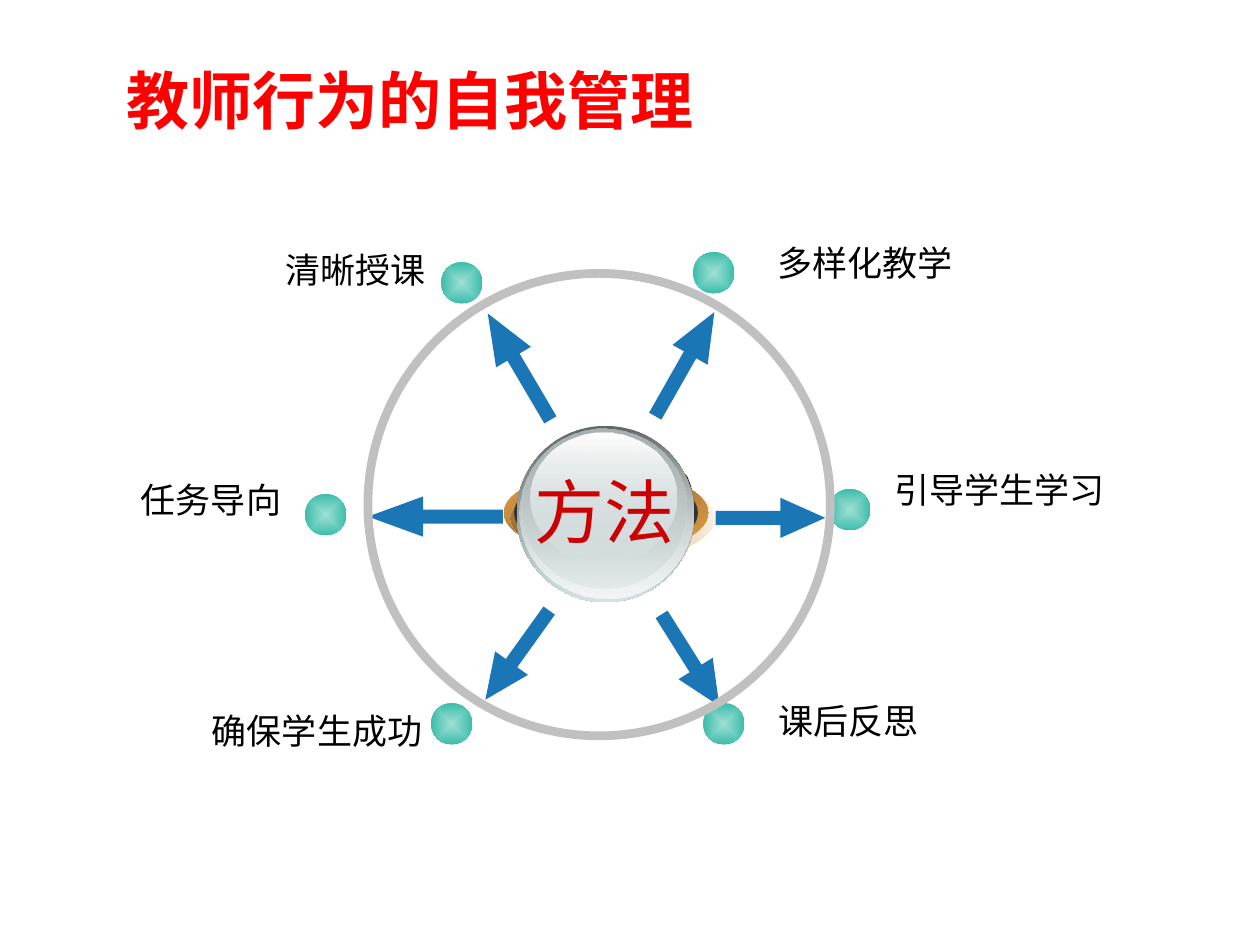
from lxml import etree
from pptx import Presentation
from pptx.dml.color import RGBColor
from pptx.enum.shapes import MSO_SHAPE
from pptx.enum.text import MSO_ANCHOR, PP_ALIGN
from pptx.oxml.ns import qn
from pptx.util import Inches, Pt

BLUE = RGBColor(0x1A, 0x76, 0xB4)
BLACK = RGBColor(0, 0, 0)
RED = RGBColor(0xFF, 0, 0)
DARK_RED = RGBColor(0xCC, 0, 0)
GRAY = RGBColor(0xC0, 0xC0, 0xC0)
CHARCOAL = RGBColor(0x33, 0x33, 0x33)
MINT = RGBColor(0xA0, 0xDF, 0xD6)
TEAL = RGBColor(0x3B, 0xBD, 0xAA)
ORANGE = RGBColor(0xEA, 0xA5, 0x4A)
BROWN = RGBColor(0x7F, 0x59, 0x28)
TAN = RGBColor(0x95, 0x69, 0x2F)
WHITE = RGBColor(0xFF, 0xFF, 0xFF)
SLATE = RGBColor(0x63, 0x68, 0x69)
SILVER = RGBColor(0xAA, 0xB2, 0xB3)
PALE = RGBColor(0xD6, 0xE1, 0xE2)
MIST = RGBColor(0xF1, 0xF5, 0xF5)

CJK_FONT = "Noto Sans CJK SC"
TITLE_FONT = "Times New Roman"
ARROW_HEIGHT = 0.32
DOT_SIZE = 0.33

ARROWS = [
    (4.96, 2.73, 0.95, 299.6),
    (5.05, 5.08, 0.86, 57.8),
    (3.63, 2.75, 0.98, 239.5),
    (3.67, 5.04, 0.87, 125.6),
    (5.68, 3.95, 0.87, 0),
    (2.92, 3.94, 1.07, 180),
]
METHODS = [
    ("多样化教学", (6.07, 1.87, 1.93, 0.44), PP_ALIGN.LEFT, (5.5, 2)),
    ("清晰授课", (2.17, 1.92, 2.04, 0.44), PP_ALIGN.LEFT, (3.5, 2.08)),
    ("引导学生学习", (7, 3.67, 2.01, 0.44), PP_ALIGN.LEFT, (6.58, 3.88)),
    ("任务导向", (0.67, 3.75, 1.66, 0.44), PP_ALIGN.RIGHT, (2.42, 3.92)),
    ("确保学生成功", (1.5, 5.58, 1.95, 0.44), PP_ALIGN.RIGHT, (3.42, 5.58)),
    ("课后反思", (6.08, 5.5, 2.01, 0.44), PP_ALIGN.LEFT, (5.58, 5.58)),
]
HUB_BAND = [
    ((5.3, 3.74, 0.2, 0.66), [(0, ORANGE, 100), (50, WHITE, 100), (100, ORANGE, 100)], 315),
    ((5.3, 3.74, 0.2, 0.66), [(0, ORANGE, 32), (100, BLACK, 90)], 315),
    ((4, 3.74, 1.62, 0.66), [(0, ORANGE, 100), (50, BROWN, 100), (100, ORANGE, 100)], 45),
    ((4.05, 3.78, 1.62, 0.66), [(0, TAN, 100), (100, ORANGE, 0)], 315),
]
HUB_CORE = (4.08, 3.74, 1.46, 0.66)
HUB_GLASS = [
    ((4.1, 3.38, 1.41, 1.4), [(0, SLATE, 100), (100, PALE, 100)], 90),
    ((4.12, 3.39, 1.38, 1.36), [(0, PALE, 0), (100, MIST, 100)], 90),
    ((4.14, 3.4, 1.31, 1.27), [(0, SILVER, 100), (100, PALE, 48)], 90),
    ((4.21, 3.43, 1.16, 1.03), [(0, WHITE, 100), (100, PALE, 38)], 90),
]


def add_figure(slide, preset, box, fill=None):
    figure = slide.shapes.add_shape(preset, *map(Inches, box))
    figure.shadow.inherit = False
    figure.line.fill.background()
    if fill is None:
        figure.fill.background()
    else:
        figure.fill.solid()
        figure.fill.fore_color.rgb = fill
    return figure


def add_gradient_ellipse(slide, box, stops, angle=None):
    ellipse = add_figure(slide, MSO_SHAPE.OVAL, box, WHITE)
    solid = ellipse._element.spPr.find(qn("a:solidFill"))
    gradient = etree.Element(qn("a:gradFill"), rotWithShape="1")
    stop_list = etree.SubElement(gradient, qn("a:gsLst"))
    for position, color, opacity in stops:
        stop = etree.SubElement(stop_list, qn("a:gs"), pos=str(position * 1000))
        tint = etree.SubElement(stop, qn("a:srgbClr"), val=str(color))
        if opacity < 100:
            etree.SubElement(tint, qn("a:alpha"), val=str(opacity * 1000))
    if angle is None:
        shading = etree.SubElement(gradient, qn("a:path"), path="shape")
        etree.SubElement(shading, qn("a:fillToRect"), l="50000", t="50000", r="50000", b="50000")
    else:
        etree.SubElement(gradient, qn("a:lin"), ang=str(angle * 60000), scaled="1")
    solid.getparent().replace(solid, gradient)


def add_label(slide, text, box, size, color, align=PP_ALIGN.LEFT, font_name=CJK_FONT,
              bold=False, wrap=True):
    frame = slide.shapes.add_textbox(*map(Inches, box)).text_frame
    frame.word_wrap = wrap
    frame.vertical_anchor = MSO_ANCHOR.TOP
    frame.text = text
    paragraph = frame.paragraphs[0]
    paragraph.alignment = align
    run = paragraph.runs[0]
    run.font.size = Pt(size)
    run.font.bold = bold
    run.font.color.rgb = color
    run.font.name = font_name
    east_asian = etree.Element(qn("a:ea"), typeface=CJK_FONT)
    run._r.rPr.find(qn("a:latin")).addnext(east_asian)


def main():
    prs = Presentation()
    prs.slide_width, prs.slide_height = Inches(10), Inches(7.5)
    slide = prs.slides.add_slide(prs.slide_layouts[6])

    for left, top, length, rotation in ARROWS:
        arrow = add_figure(slide, MSO_SHAPE.RIGHT_ARROW, (left, top, length, ARROW_HEIGHT), BLUE)
        arrow.adjustments[0] = 0.35
        arrow.adjustments[1] = 0.41 * length / ARROW_HEIGHT
        arrow.rotation = rotation

    for text, box, align, dot in METHODS:
        add_label(slide, text, box, 20, BLACK, align)
        add_gradient_ellipse(slide, (*dot, DOT_SIZE, DOT_SIZE), [(0, MINT, 100), (100, TEAL, 100)])

    for layer in HUB_BAND:
        add_gradient_ellipse(slide, *layer)
    add_figure(slide, MSO_SHAPE.OVAL, HUB_CORE, CHARCOAL)
    for layer in HUB_GLASS:
        add_gradient_ellipse(slide, *layer)
    add_label(slide, "方法", (4, 3.67, 1.59, 0.77), 40, DARK_RED, PP_ALIGN.CENTER)

    ring = add_figure(slide, MSO_SHAPE.OVAL, (2.92, 2.17, 3.67, 3.67))
    ring.line.color.rgb = GRAY
    ring.line.width = Pt(5)

    add_label(slide, "教师行为的自我管理", (0.91, 0.44, 4.76, 0.71), 36, RED,
              font_name=TITLE_FONT, bold=True, wrap=False)
    prs.save("out.pptx")


if __name__ == "__main__":
    main()
